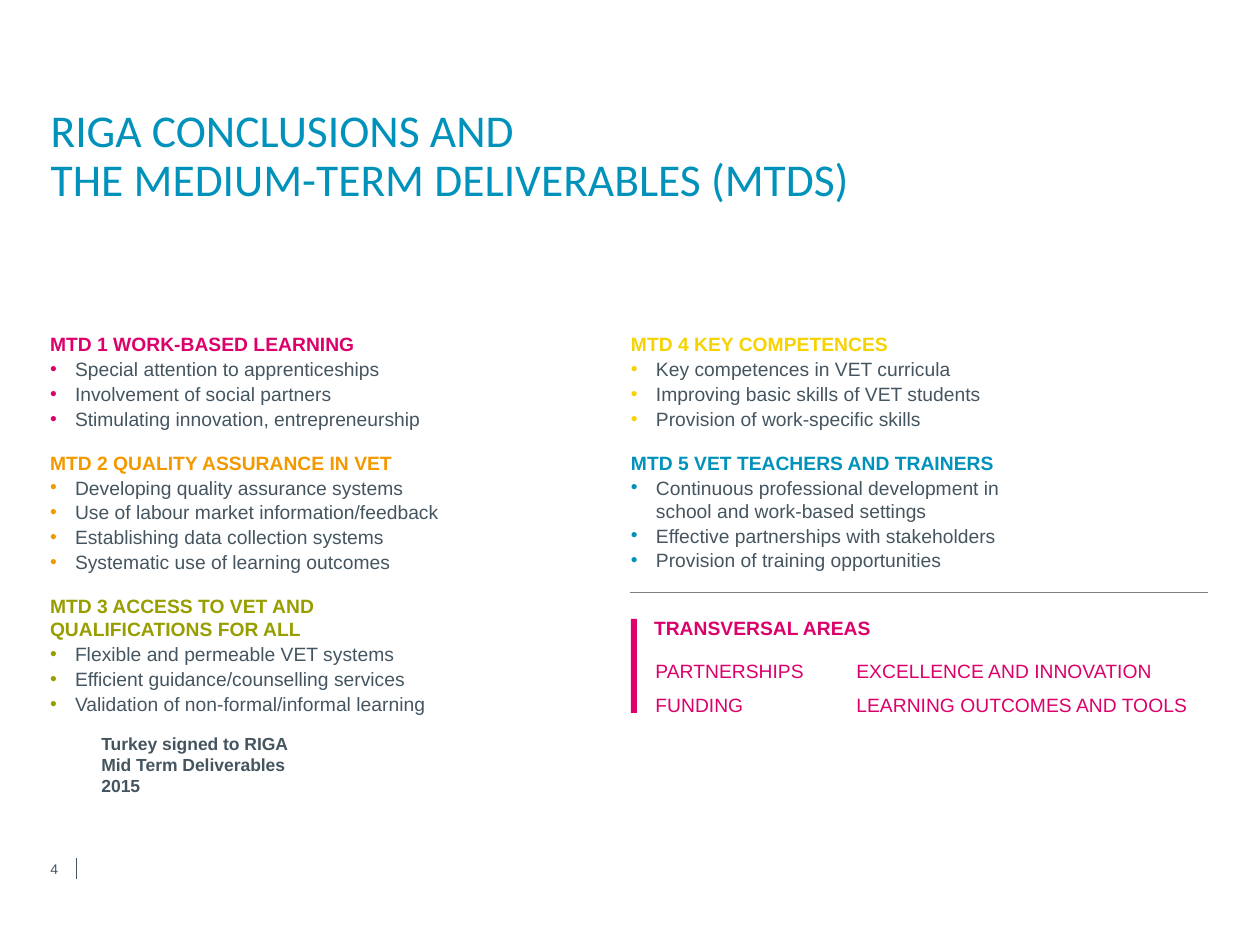
from dataclasses import dataclass

from lxml import etree
from pptx import Presentation
from pptx.dml.color import RGBColor
from pptx.enum.shapes import MSO_CONNECTOR, MSO_SHAPE
from pptx.enum.text import MSO_ANCHOR, MSO_AUTO_SIZE, PP_ALIGN
from pptx.oxml.ns import qn
from pptx.util import Emu, Pt

PX_PER_INCH = 126
MAGENTA, ORANGE, OLIVE, YELLOW, BLUE = "DC006B", "F39900", "989E00", "F6D300", "0092BB"
SLATE, GREY = "455560", "808080"
BULLET_INDENT = 25


@dataclass(frozen=True)
class Box:
    left: int
    top: int
    width: int
    height: int

    def emu(self) -> tuple:
        return px(self.left), px(self.top), px(self.width), px(self.height)


@dataclass(frozen=True)
class Deliverable:
    heading: str
    color: str
    points: tuple


@dataclass(frozen=True)
class Label:
    box: Box
    lines: tuple
    size: int = 11
    color: str = MAGENTA
    bold: bool = False
    anchor: MSO_ANCHOR = MSO_ANCHOR.TOP


LEFT_DELIVERABLES = (
    Deliverable("MTD 1 WORK-BASED LEARNING", MAGENTA, (
        "Special attention to apprenticeships",
        "Involvement of social partners",
        "Stimulating innovation, entrepreneurship")),
    Deliverable("MTD 2 QUALITY ASSURANCE IN VET", ORANGE, (
        "Developing quality assurance systems",
        "Use of labour market information/feedback",
        "Establishing data collection systems",
        "Systematic use of learning outcomes")),
    Deliverable("MTD 3 ACCESS TO VET AND\vQUALIFICATIONS FOR ALL", OLIVE, (
        "Flexible and permeable VET systems",
        "Efficient guidance/counselling services",
        "Validation of non-formal/informal learning")),
)
RIGHT_DELIVERABLES = (
    Deliverable("MTD 4 KEY COMPETENCES", YELLOW, (
        "Key competences in VET curricula",
        "Improving basic skills of VET students",
        "Provision of work-specific skills")),
    Deliverable("MTD 5 VET TEACHERS AND TRAINERS", BLUE, (
        "Continuous professional development in\vschool and work-based settings",
        "Effective partnerships with stakeholders",
        "Provision of training opportunities")),
)
LABELS = (
    Label(Box(89, 741, 218, 47), ("Turkey signed to RIGA Mid Term Deliverables 2015",),
          size=10, color=SLATE, bold=True, anchor=MSO_ANCHOR.MIDDLE),
    Label(Box(38, 851, 54, 35), ("4",), size=8, color=SLATE, anchor=MSO_ANCHOR.MIDDLE),
    Label(Box(641, 610, 600, 37), ("TRANSVERSAL AREAS",), bold=True),
    Label(Box(643, 653, 198, 71), ("PARTNERSHIPS", "FUNDING")),
    Label(Box(844, 653, 408, 71), ("EXCELLENCE AND INNOVATION", "LEARNING OUTCOMES AND TOOLS")),
)


def px(length: int) -> Emu:
    return Emu(round(length * 914400 / PX_PER_INCH))


def rgb(color: str) -> RGBColor:
    return RGBColor.from_string(color)


def style(paragraph, size: int, color: str, bold: bool = False, name: str = "Arial") -> None:
    font = paragraph.font
    font.name, font.size, font.bold = name, Pt(size), bold
    font.color.rgb = rgb(color)


def place(shape, box: Box) -> None:
    shape.left, shape.top, shape.width, shape.height = box.emu()


def next_paragraph(frame, index: int):
    return frame.paragraphs[0] if index == 0 else frame.add_paragraph()


def set_bullet(paragraph, color: str | None) -> None:
    """Give the paragraph a coloured hanging bullet, or none without a color."""
    properties = paragraph._p.get_or_add_pPr()
    indent = px(BULLET_INDENT) if color else 0
    properties.set("marL", str(indent))
    properties.set("indent", str(-indent))
    if color is None:
        etree.SubElement(properties, qn("a:buNone"))
        return
    bullet_color = etree.SubElement(properties, qn("a:buClr"))
    etree.SubElement(bullet_color, qn("a:srgbClr"), val=color)
    etree.SubElement(properties, qn("a:buFont"), typeface="Arial")
    etree.SubElement(properties, qn("a:buChar"), char="•")


def fill_title(title) -> None:
    place(title, Box(38, 102, 998, 151))
    frame = title.text_frame
    frame.auto_size = MSO_AUTO_SIZE.NONE
    frame.vertical_anchor = MSO_ANCHOR.TOP
    paragraph = frame.paragraphs[0]
    paragraph.text = "RIGA CONCLUSIONS AND\vTHE MEDIUM-TERM DELIVERABLES (MTDS)"
    paragraph.alignment = PP_ALIGN.LEFT
    paragraph.line_spacing = 0.9
    style(paragraph, 26, BLUE, name="Calibri")


def fill_deliverables(body, box: Box, deliverables: tuple) -> None:
    place(body, box)
    frame = body.text_frame
    frame.auto_size = MSO_AUTO_SIZE.NONE
    frame.margin_left = 0
    rows = [
        (text, item, position)
        for item in deliverables
        for position, text in enumerate((item.heading, *item.points))
    ]
    for index, (text, item, position) in enumerate(rows):
        is_heading = position == 0
        paragraph = next_paragraph(frame, index)
        paragraph.text = text
        paragraph.level = 0 if is_heading else 1
        set_bullet(paragraph, None if is_heading else item.color)
        paragraph.space_before = Pt(0)
        paragraph.space_after = Pt(12 if position == len(item.points) else 1)
        style(paragraph, 11, item.color if is_heading else SLATE, bold=is_heading)


def add_label(slide, label: Label) -> None:
    frame = slide.shapes.add_textbox(*label.box.emu()).text_frame
    frame.word_wrap = True
    frame.vertical_anchor = label.anchor
    if label.lines == ("TRANSVERSAL AREAS",):
        frame.margin_left = px(13)
    for index, line in enumerate(label.lines):
        paragraph = next_paragraph(frame, index)
        paragraph.text = line
        if index < len(label.lines) - 1:
            paragraph.space_after = Pt(6)
        style(paragraph, label.size, label.color, label.bold)


def add_rule(slide, start: tuple, end: tuple, color: str, width: float) -> None:
    rule = slide.shapes.add_connector(MSO_CONNECTOR.STRAIGHT, *map(px, (*start, *end)))
    rule.line.color.rgb = rgb(color)
    rule.line.width = Pt(width)
    etree.SubElement(rule._element.spPr, qn("a:effectLst"))


def add_accent_bar(slide, box: Box, color: str) -> None:
    bar = slide.shapes.add_shape(MSO_SHAPE.RECTANGLE, *box.emu())
    bar.shadow.inherit = False
    bar.fill.solid()
    bar.fill.fore_color.rgb = rgb(color)
    bar.line.fill.background()


def main() -> None:
    presentation = Presentation()
    presentation.slide_width, presentation.slide_height = px(1260), px(945)
    slide = presentation.slides.add_slide(presentation.slide_layouts.get_by_name("Two Content"))
    title, left_body, right_body = slide.placeholders
    fill_title(title)
    fill_deliverables(left_body, Box(50, 326, 563, 437), LEFT_DELIVERABLES)
    fill_deliverables(right_body, Box(631, 326, 605, 258), RIGHT_DELIVERABLES)
    for label in LABELS:
        add_label(slide, label)
    add_rule(slide, (76, 858), (76, 879), SLATE, 0.25)
    add_rule(slide, (1208, 592), (630, 592), GREY, 0.5)
    add_accent_bar(slide, Box(631, 619, 6, 94), MAGENTA)
    presentation.save("out.pptx")


if __name__ == "__main__":
    main()
